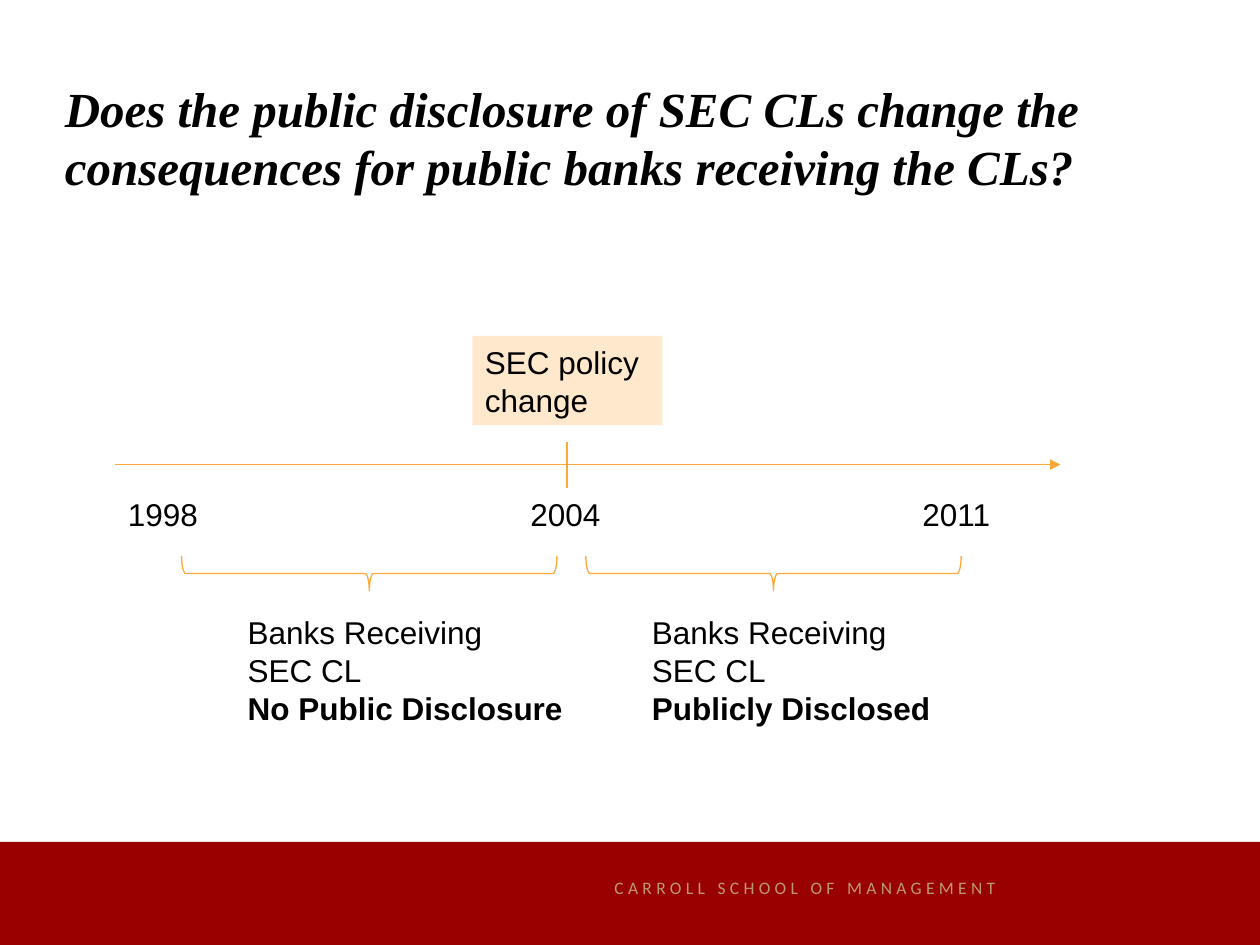
"""Build a slide with a timeline of public disclosure of SEC comment letters."""
from dataclasses import dataclass

from lxml import etree
from pptx import Presentation
from pptx.dml.color import RGBColor
from pptx.enum.shapes import MSO_CONNECTOR, MSO_SHAPE
from pptx.enum.text import MSO_ANCHOR, PP_ALIGN
from pptx.oxml.ns import qn
from pptx.util import Pt

RECTANGLE = MSO_SHAPE.RECTANGLE
BRACE = MSO_SHAPE.RIGHT_BRACE
STRAIGHT = MSO_CONNECTOR.STRAIGHT
MIDDLE, TOP = MSO_ANCHOR.MIDDLE, MSO_ANCHOR.TOP
LEFT = PP_ALIGN.LEFT


@dataclass(frozen=True)
class Theme:
    banner: RGBColor = RGBColor(0x99, 0x00, 0x00)
    school: RGBColor = RGBColor(0xBC, 0x9B, 0x6A)
    ink: RGBColor = RGBColor(0x00, 0x00, 0x00)
    axis: RGBColor = RGBColor(0xFE, 0xA8, 0x3A)
    event: RGBColor = RGBColor(0xFF, 0xAB, 0x40)
    event_opacity: int = 27
    title_size: int = 28
    body_size: int = 18
    school_size: int = 10
    line_width: float = 0.75


THEME = Theme()
BODY = {"name": "Arial", "size": Pt(THEME.body_size)}
TITLE = {"name": "Times New Roman", "size": Pt(THEME.title_size),
         "bold": True, "italic": True}
SCHOOL = {"name": "Calibri", "size": Pt(THEME.school_size)}


def write(shape, lines, style, color=THEME.ink, wrap=False, anchor=TOP,
          bold_last=False):
    frame = shape.text_frame
    frame.word_wrap = wrap
    frame.vertical_anchor = anchor
    frame.text = "\n".join(lines)
    for paragraph in frame.paragraphs:
        paragraph.alignment = LEFT
        for run in paragraph.runs:
            for attribute, value in style.items():
                setattr(run.font, attribute, value)
            run.font.color.rgb = color
    if bold_last:
        frame.paragraphs[-1].runs[0].font.bold = True
    return frame


def add_text(slide, box, lines, style, **options):
    label = slide.shapes.add_textbox(*map(Pt, box))
    return write(label, lines, style, **options)


def add_block(slide, box, color, opacity=100):
    block = slide.shapes.add_shape(RECTANGLE, *map(Pt, box))
    block.shadow.inherit = False
    block.fill.solid()
    block.fill.fore_color.rgb = color
    block.line.fill.background()
    if opacity < 100:
        tint = block.fill._xPr.find(".//" + qn("a:srgbClr"))
        etree.SubElement(tint, qn("a:alpha"), val=str(opacity * 1000))
    return block


def add_line(slide, start, end, arrow=False):
    line = slide.shapes.add_connector(STRAIGHT, *map(Pt, start + end))
    line.line.color.rgb = THEME.axis
    line.line.width = Pt(THEME.line_width)
    if arrow:
        etree.SubElement(line.line._get_or_add_ln(), qn("a:tailEnd"),
                         type="triangle")
    etree.SubElement(line._element.spPr, qn("a:effectLst"))


def add_brace(slide, center, middle, span, depth):
    brace = slide.shapes.add_shape(
        BRACE, Pt(center - depth / 2), Pt(middle - span / 2), Pt(depth), Pt(span))
    brace.rotation = 90
    brace.adjustments[0] = 0.12
    brace.shadow.inherit = False
    brace.fill.background()
    brace.line.color.rgb = THEME.axis
    brace.line.width = Pt(THEME.line_width)


def add_years(slide, box, years, stops):
    frame = add_text(slide, box, ["\t".join(years)], BODY, wrap=True)
    properties = frame.paragraphs[0]._p.get_or_add_pPr()
    tabs = etree.SubElement(properties, qn("a:tabLst"))
    for stop in stops:
        etree.SubElement(tabs, qn("a:tab"), pos=str(Pt(stop)), algn="l")


def add_banner(slide):
    add_block(slide, (0, 481, 720, 60), THEME.banner)
    school = add_text(slide, (344, 497.5, 254, 19.5),
                      ["CARROLL SCHOOL OF MANAGEMENT"], SCHOOL,
                      color=THEME.school)
    school.paragraphs[0].runs[0]._r.get_or_add_rPr().set("spc", "250")


def add_timeline(slide):
    axis_y, change_x = 265.5, 324
    add_line(slide, (66, axis_y), (606, axis_y), arrow=True)
    add_line(slide, (change_x, axis_y - 13), (change_x, axis_y + 13.5))
    add_years(slide, (66, 279.5, 516, 29), ["1998", "2004", "2011"], (230, 454))
    event = add_block(slide, (270, 192, 108.5, 51), THEME.event,
                      THEME.event_opacity)
    write(event, ["SEC policy", "change"], BODY, anchor=MIDDLE)


def add_period(slide, center, disclosure, width):
    add_brace(slide, center, middle=327.75, span=214.5, depth=20)
    add_text(slide, (center - 76.5, 347, width, 73),
             ["Banks Receiving", "SEC CL", disclosure], BODY, bold_last=True)


def main():
    presentation = Presentation()
    presentation.slide_width, presentation.slide_height = Pt(720), Pt(540)
    slide = presentation.slides.add_slide(presentation.slide_layouts[6])
    add_banner(slide)
    add_text(slide, (30, 34, 660, 88.5),
             ["Does the public disclosure of SEC CLs change the consequences "
              "for public banks receiving the CLs?"],
             TITLE, wrap=True, anchor=MIDDLE)
    add_timeline(slide)
    periods = [("No Public Disclosure", 196.5), ("Publicly Disclosed", 175)]
    for index, (disclosure, width) in enumerate(periods):
        add_period(slide, 211 + 231 * index, disclosure, width)
    presentation.save("out.pptx")


if __name__ == "__main__":
    main()
